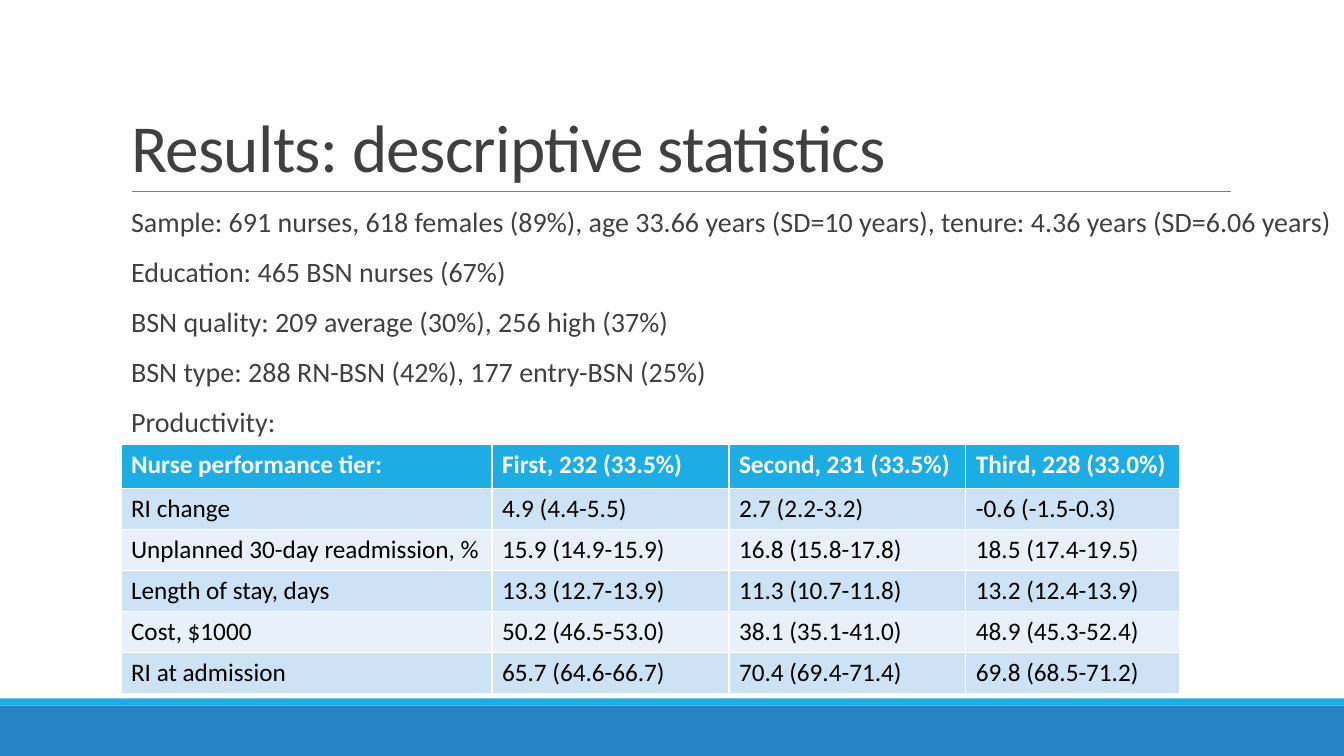
import pptx
import pptx.util
import pptx.dml.color
import pptx.enum.shapes
import pptx.enum.text
import pptx.oxml
import pptx.oxml.ns
from lxml import etree

Inches, Pt = pptx.util.Inches, pptx.util.Pt
RGBColor = pptx.dml.color.RGBColor
ANCHOR = pptx.enum.text.MSO_ANCHOR
qn = pptx.oxml.ns.qn

TITLE = "Results: descriptive statistics"
FINDINGS = [
    "Sample: 691 nurses, 618 females (89%), age 33.66 years (SD=10 years), "
    "tenure: 4.36 years (SD=6.06 years)",
    "Education: 465 BSN nurses (67%)",
    "BSN quality: 209 average (30%), 256 high (37%)",
    "BSN type: 288 RN-BSN (42%), 177 entry-BSN (25%)",
    "Productivity:",
]
TIERS = [
    ("Nurse performance tier:", "First, 232 (33.5%)", "Second, 231 (33.5%)", "Third, 228 (33.0%)"),
    ("RI change", "4.9 (4.4-5.5)", "2.7 (2.2-3.2)", "-0.6 (-1.5-0.3)"),
    ("Unplanned 30-day readmission, %", "15.9 (14.9-15.9)", "16.8 (15.8-17.8)", "18.5 (17.4-19.5)"),
    ("Length of stay, days", "13.3 (12.7-13.9)", "11.3 (10.7-11.8)", "13.2 (12.4-13.9)"),
    ("Cost, $1000", "50.2 (46.5-53.0)", "38.1 (35.1-41.0)", "48.9 (45.3-52.4)"),
    ("RI at admission", "65.7 (64.6-66.7)", "70.4 (69.4-71.4)", "69.8 (68.5-71.2)"),
]

BLUE = RGBColor(0x26, 0x83, 0xC6)
CYAN = RGBColor(0x1C, 0xAD, 0xE4)
GRAY = RGBColor(0x80, 0x80, 0x80)
DARK = RGBColor(0x40, 0x40, 0x40)
BLACK = RGBColor(0, 0, 0)
WHITE = RGBColor(0xFF, 0xFF, 0xFF)
BANDS = (RGBColor(0xE8, 0xF1, 0xFA), RGBColor(0xCD, 0xE3, 0xF5))

W, H = 13.33, 7.5
LEFT = 1.2
RULE_Y = 1.9
BAR_Y, STRIPE_H = 7, 0.07
COLS = (3.68, 2.35, 2.35, 2.12)
HEAD_H, ROW_H = 0.44, 0.405


def write(p, text, size, color, bold=False, spacing=None):
    r = p.add_run()
    r.text = text
    r.font.name = "Calibri"
    r.font.size = Pt(size)
    r.font.bold = bold
    r.font.color.rgb = color
    if spacing is not None:
        r.font._element.set("spc", str(round(spacing * 100)))


def place(shape, x, y, w, h):
    shape.left, shape.top, shape.width, shape.height = map(Inches, (x, y, w, h))


def add_bar(s, y, h, color):
    bar = s.shapes.add_shape(pptx.enum.shapes.MSO_SHAPE.RECTANGLE, 0, Inches(y), Inches(W), Inches(h))
    bar.shadow.inherit = False
    bar.fill.solid()
    bar.fill.fore_color.rgb = color
    bar.line.fill.background()


def add_title(s):
    title = s.shapes.title
    place(title, LEFT, 0.31, 11, RULE_Y - 0.31)
    tf = title.text_frame
    tf.auto_size = pptx.enum.text.MSO_AUTO_SIZE.NONE
    tf.vertical_anchor = ANCHOR.BOTTOM
    p = tf.paragraphs[0]
    p.alignment = pptx.enum.text.PP_ALIGN.LEFT
    p.line_spacing = 0.85
    write(p, TITLE, 48, DARK, spacing=-0.5)


def add_findings(s):
    body = s.placeholders[1]
    place(body, LEFT, 2.02, W - LEFT, 4.4)
    tf = body.text_frame
    tf.auto_size = pptx.enum.text.MSO_AUTO_SIZE.NONE
    tf.margin_left = tf.margin_right = 0
    for i, line in enumerate(FINDINGS):
        p = tf.add_paragraph() if i else tf.paragraphs[0]
        p.line_spacing, p.space_before, p.space_after = 0.9, Pt(12), Pt(2)
        pPr = p._p.get_or_add_pPr()
        pPr.set("marL", str(Inches(0.1)))
        pPr.set("indent", str(-Inches(0.1)))
        bullet_color = etree.SubElement(pPr, qn("a:buClr"))
        etree.SubElement(bullet_color, qn("a:srgbClr"), val=str(CYAN))
        etree.SubElement(pPr, qn("a:buChar"), char=" ")
        write(p, line, 20, DARK)


def add_tiers(s):
    height = HEAD_H + ROW_H * (len(TIERS) - 1)
    table = s.shapes.add_table(len(TIERS), len(COLS), Inches(LEFT), Inches(4.41),
                               Inches(sum(COLS)), Inches(height)).table
    for column, width in zip(table.columns, COLS):
        column.width = Inches(width)
    for i, values in enumerate(TIERS):
        head = i == 0
        table.rows[i].height = Inches(HEAD_H if head else ROW_H)
        for j, value in enumerate(values):
            cell = table.cell(i, j)
            cell.fill.solid()
            cell.fill.fore_color.rgb = CYAN if head else BANDS[i % 2]
            write(cell.text_frame.paragraphs[0], value, 18, WHITE if head else BLACK, bold=head)


def main():
    prs = pptx.Presentation()
    prs.slide_width, prs.slide_height = Inches(W), Inches(H)
    s = prs.slides.add_slide(prs.slide_layouts[1])
    add_bar(s, BAR_Y, H - BAR_Y, BLUE)
    add_bar(s, BAR_Y - STRIPE_H, STRIPE_H, CYAN)
    rule = s.shapes.add_connector(pptx.enum.shapes.MSO_CONNECTOR.STRAIGHT,
                                  Inches(1.31), Inches(RULE_Y), Inches(12.21), Inches(RULE_Y))
    rule.line.color.rgb = GRAY
    rule.line.width = Pt(0.5)
    etree.SubElement(rule._element.spPr, qn("a:effectLst"))
    add_title(s)
    add_findings(s)
    add_tiers(s)
    prs.save("out.pptx")


if __name__ == "__main__":
    main()
